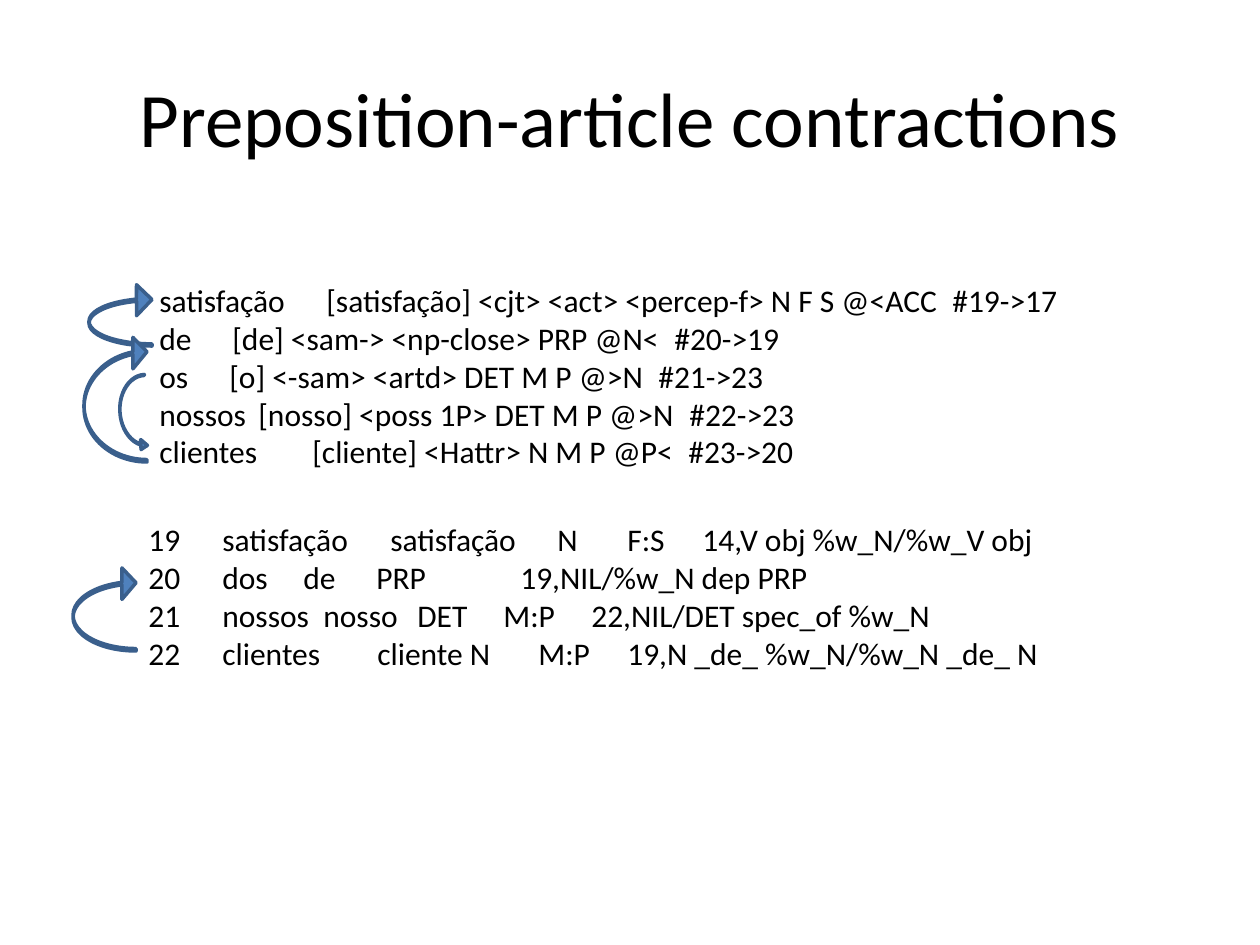
import pptx
import pptx.util
import pptx.dml.color
import pptx.enum.shapes
import pptx.enum.text
import pptx.oxml.ns
import lxml.etree

PX = 914400 // 126
INSET = 13
COLORS = {"text": "000000", "fill": "4F81BD", "line": "3A5F8C"}

TITLE = "Preposition-article contractions"

# Each block: box, then rows of columns with the x where each later column starts
BLOCKS = [
    ((147, 275, 987, 204), [
        ("satisfação", (327, "[satisfação] <cjt> <act> <percep-f> N F S @<ACC"), (953, "#19->17")),
        ("de", (233, "[de] <sam-> <np-close> PRP @N<"), (675, "#20->19")),
        ("os", (230, "[o] <-sam> <artd> DET M P @>N"), (659, "#21->23")),
        ("nossos", (259, "[nosso] <poss 1P> DET M P @>N"), (690, "#22->23")),
        ("clientes", (313, "[cliente] <Hattr> N M P @P<"), (689, "#23->20")),
    ]),
    ((136, 514, 1071, 165), [
        ("19", (223, "satisfação"), (391, "satisfação"), (558, "N"), (628, "F:S"),
         (703, "14,V obj %w_N/%w_V obj")),
        ("20", (223, "dos"), (304, "de"), (377, "PRP"), (521, "19,NIL/%w_N dep PRP")),
        ("21", (223, "nossos"), (324, "nosso"), (418, "DET"), (504, "M:P"),
         (592, "22,NIL/DET spec_of %w_N")),
        ("22", (223, "clientes"), (378, "cliente N"), (539, "M:P"),
         (628, "19,N _de_ %w_N/%w_N _de_ N")),
    ]),
]

# Box, rotation, mirrored, adjustments
ARROWS = [
    ((89, 284, 63, 62), 180, False, (0.035, 0.5, 0.25)),
    ((84, 336, 63, 126), 180, False, (0.039, 0.5, 0.224)),
    ((120, 375, 26, 76), 357.5, True, (0.035, 0.382, 0.25)),
    ((73, 567, 63, 84), 180, False, (0.039, 0.5, 0.224)),
]


def emu(box):
    return [n * PX for n in box]


def rgb(name):
    return pptx.dml.color.RGBColor.from_string(COLORS[name])


def style(par, size):
    par.font.name = "Calibri"
    par.font.size = pptx.util.Pt(size)
    par.font.color.rgb = rgb("text")


def add_stops(par, stops):
    tag = pptx.oxml.ns.qn
    tabs = lxml.etree.SubElement(par._p.get_or_add_pPr(), tag("a:tabLst"))
    # Tab stops come before the default run properties
    tabs.getparent().insert(0, tabs)
    for x in stops:
        lxml.etree.SubElement(tabs, tag("a:tab"), pos=str(x * PX), algn="l")


def add_text(slide, box):
    frame = slide.shapes.add_textbox(*emu(box)).text_frame
    frame.word_wrap = True
    return frame


def add_block(slide, box, rows):
    frame = add_text(slide, box)
    for i, (first, *rest) in enumerate(rows):
        par = frame.paragraphs[0] if i == 0 else frame.add_paragraph()
        par.text = "\t".join([first] + [word for _, word in rest])
        style(par, 18)
        add_stops(par, [x - box[0] - INSET for x, _ in rest])


def add_arrow(slide, box, turn, flip, adjust):
    kind = pptx.enum.shapes.MSO_SHAPE.CURVED_LEFT_ARROW
    arrow = slide.shapes.add_shape(kind, *emu(box))
    arrow.shadow.inherit = False
    arrow.rotation = turn
    for i, value in enumerate(adjust):
        arrow.adjustments[i] = value
    if flip:
        arrow._element.spPr.xfrm.set("flipH", "1")
    arrow.fill.solid()
    arrow.fill.fore_color.rgb = rgb("fill")
    arrow.line.color.rgb = rgb("line")
    arrow.line.width = pptx.util.Pt(2)


def main():
    deck = pptx.Presentation()
    deck.slide_width, deck.slide_height = 1260 * PX, 945 * PX
    slide = deck.slides.add_slide(deck.slide_layouts[6])

    # Title
    frame = add_text(slide, (63, 38, 1134, 157))
    frame.vertical_anchor = pptx.enum.text.MSO_ANCHOR.MIDDLE
    par = frame.paragraphs[0]
    par.text = TITLE
    par.alignment = pptx.enum.text.PP_ALIGN.CENTER
    style(par, 44)

    # Parse listings
    for box, rows in BLOCKS:
        add_block(slide, box, rows)

    # Dependency arrows
    for arrow in ARROWS:
        add_arrow(slide, *arrow)

    deck.save("out.pptx")


if __name__ == "__main__":
    main()
